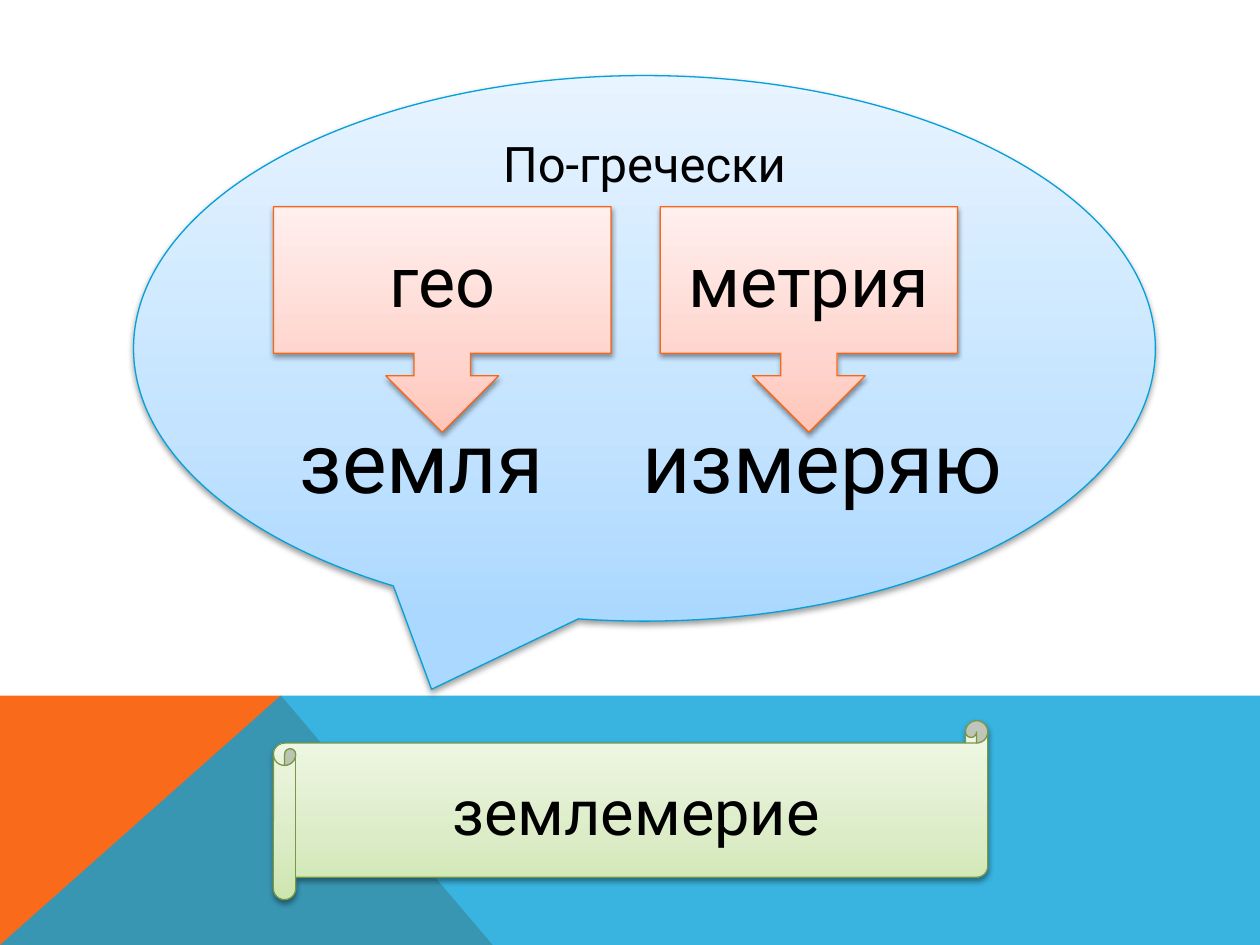
from copy import deepcopy

from lxml.etree import SubElement
from pptx import Presentation
from pptx.dml.color import RGBColor
from pptx.enum.shapes import MSO_SHAPE
from pptx.enum.text import MSO_ANCHOR, PP_ALIGN
from pptx.oxml.ns import qn
from pptx.util import Inches, Pt

BLUE = ("03A0D9", ("ABD8FF", "C3E3FF", "E8F4FF"))
CORAL = ("F96615", ("FFC5BA", "FFD6CF", "FFEFED"))
GREEN = ("7A9746", ("CDE6AF", "DCECC7", "F1F9E9"))
STOP_POSITIONS = (0, 0.35, 1)

BANDS = [
    ("F96A1B", 100, [(0, 7.5), (0, 5.52), (2.23, 5.52), (3.91, 7.5)]),
    ("08A1D9", 80, [(0, 7.5), (2.23, 5.52), (10, 5.52), (10, 7.5)]),
]
BUBBLE = ("По-гречески", MSO_SHAPE.OVAL_CALLOUT, (1.06, 0.6, 8.11, 4.33), BLUE, 28)
PANELS = [
    ("гео", MSO_SHAPE.DOWN_ARROW_CALLOUT, (2.17, 1.64, 2.68, 1.79), CORAL, 40),
    ("метрия", MSO_SHAPE.DOWN_ARROW_CALLOUT, (5.24, 1.64, 2.36, 1.79), CORAL, 40),
    ("землемерие", MSO_SHAPE.HORIZONTAL_SCROLL, (2.17, 5.72, 5.67, 1.42), GREEN, 36),
]
MEANINGS = [("земля", (1.69, 3.2, 3.31, 0.91)), ("измеряю", (4.98, 3.2, 3.09, 0.91))]


def color(hex_text):
    return RGBColor.from_string(hex_text)


def write(shape, text, size, anchor=MSO_ANCHOR.MIDDLE):
    frame = shape.text_frame
    frame.word_wrap = True
    frame.vertical_anchor = anchor
    para = frame.paragraphs[0]
    para.alignment = PP_ALIGN.CENTER
    span = para.add_run()
    span.text = text
    span.font.name = "Roboto"
    span.font.size = Pt(size)
    span.font.color.rgb = color("000000")


def add_band(page, fill, opacity, points):
    corners = [(Inches(x), Inches(y)) for x, y in points]
    builder = page.shapes.build_freeform(*corners[0], scale=1.0)
    builder.add_line_segments(corners[1:], close=True)
    band = builder.convert_to_shape()
    band.shadow.inherit = False
    band.line.fill.background()
    band.fill.solid()
    band.fill.fore_color.rgb = color(fill)
    if opacity < 100:
        tint = band.element.spPr.find(qn("a:solidFill"))[0]
        SubElement(tint, qn("a:alpha"), val=str(opacity * 1000))


def add_shadow(shape):
    shape.shadow.inherit = False
    effects = shape.element.spPr.find(qn("a:effectLst"))
    shadow = SubElement(effects, qn("a:outerShdw"), blurRad=str(Pt(3.1)),
                        dist=str(Pt(1.6)), dir="5400000", rotWithShape="0")
    tint = SubElement(shadow, qn("a:srgbClr"), val="000000")
    SubElement(tint, qn("a:alpha"), val="38000")


def add_panel(page, text, kind, place, palette, size, anchor=MSO_ANCHOR.MIDDLE):
    outline, shades = palette
    panel = page.shapes.add_shape(kind, *map(Inches, place))
    panel.fill.gradient()
    panel.fill.gradient_angle = 90
    stop_list = panel.element.spPr.find(qn("a:gradFill")).find(qn("a:gsLst"))
    stop_list.append(deepcopy(stop_list[0]))
    for stop, shade, position in zip(panel.fill.gradient_stops, shades, STOP_POSITIONS):
        stop.color.rgb = color(shade)
        stop.position = position
    panel.line.color.rgb = color(outline)
    panel.line.width = Pt(0.75)
    add_shadow(panel)
    write(panel, text, size, anchor)
    return panel


def main():
    deck = Presentation()
    deck.slide_width, deck.slide_height = Inches(10), Inches(7.5)
    page = deck.slides.add_slide(deck.slide_layouts[6])
    for band in BANDS:
        add_band(page, *band)
    bubble = add_panel(page, *BUBBLE, anchor=MSO_ANCHOR.TOP)
    bubble.text_frame.margin_top = Inches(-0.17)
    for panel in PANELS:
        add_panel(page, *panel)
    for text, place in MEANINGS:
        box = page.shapes.add_textbox(*map(Inches, place))
        write(box, text, 48, MSO_ANCHOR.TOP)
    deck.save("out.pptx")


if __name__ == "__main__":
    main()
